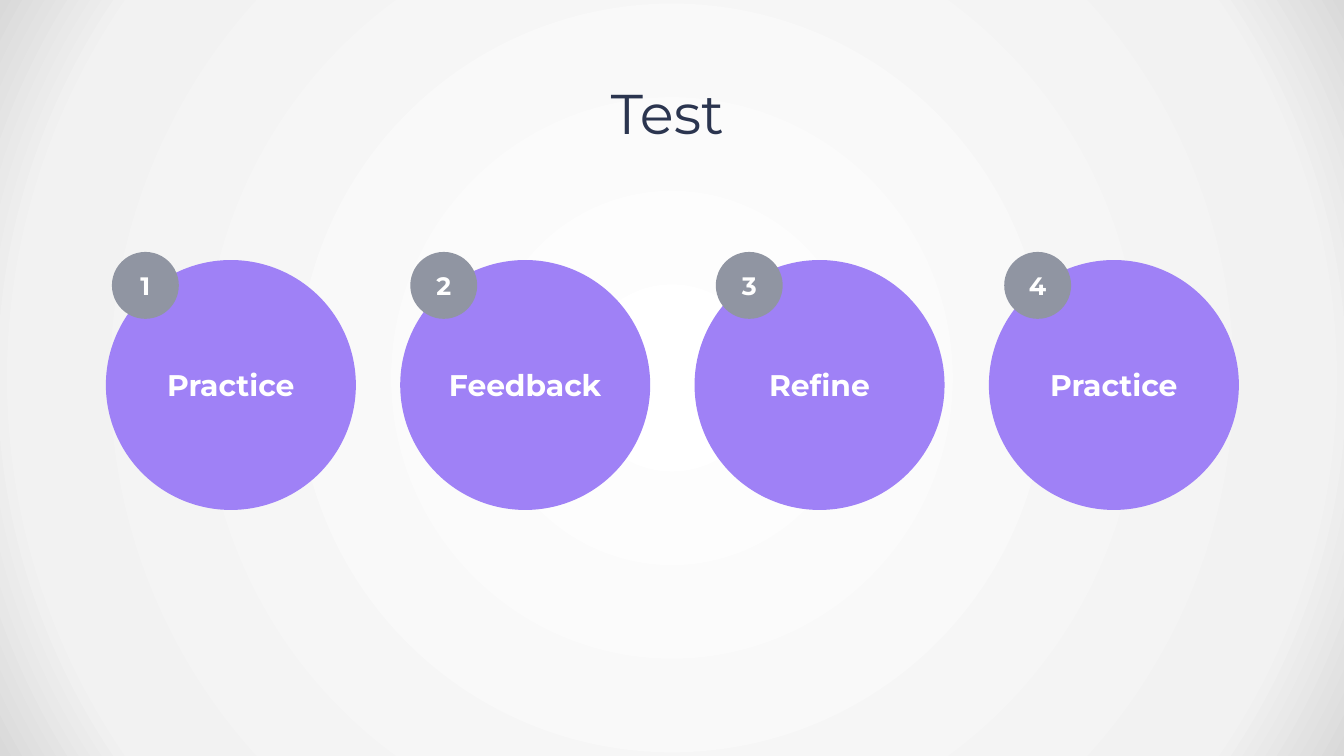
import pptx
import pptx.dml.color
import pptx.enum.shapes
import pptx.enum.text
import pptx.oxml
import pptx.oxml.ns
import pptx.util

RGBColor = pptx.dml.color.RGBColor
WHITE = RGBColor(0xFF, 0xFF, 0xFF)
PALE = RGBColor(0xF2, 0xF2, 0xF2)
SHADE = RGBColor(0xD9, 0xD9, 0xD9)
NAVY = RGBColor(0x2B, 0x35, 0x4F)
PURPLE = RGBColor(0x9F, 0x81, 0xF6)
GREY = RGBColor(0x90, 0x95, 0xA2)

SHAPES = pptx.enum.shapes.MSO_SHAPE


class Page:
    """One slide and its style; lengths are percentages of the slide's size."""

    font_name = "Montserrat"

    def __init__(self, deck):
        self.width, self.height = deck.slide_width, deck.slide_height
        self.shapes = deck.slides.add_slide(deck.slide_layouts[6]).shapes

    def across(self, share):
        return round(self.width * share / 100)

    def down(self, share):
        return round(self.height * share / 100)

    def label(self, box, text, size, color, bold=False, wrap=True, insets=(0, 0, 0, 0)):
        frame = box.text_frame
        frame.word_wrap = wrap
        frame.vertical_anchor = pptx.enum.text.MSO_ANCHOR.MIDDLE
        (frame.margin_left, frame.margin_top,
         frame.margin_right, frame.margin_bottom) = map(pptx.util.Inches, insets)
        para = frame.paragraphs[0]
        para.alignment = pptx.enum.text.PP_ALIGN.CENTER
        span = para.add_run()
        span.text = text
        span.font.name = self.font_name
        span.font.size = pptx.util.Pt(size)
        span.font.bold = bold
        span.font.color.rgb = color
        return para

    def backdrop(self, stops):
        box = self.shapes.add_shape(SHAPES.RECTANGLE, 0, 0, self.width, self.height)
        box.shadow.inherit = False
        box.line.fill.background()
        box.fill.background()
        colors = "".join(
            f'<a:gs pos="{share * 1000}"><a:srgbClr val="{color}"/></a:gs>'
            for share, color in stops)
        gradient = pptx.oxml.parse_xml(
            f'<a:gradFill {pptx.oxml.ns.nsdecls("a")}><a:gsLst>{colors}</a:gsLst>'
            '<a:path path="circle">'
            '<a:fillToRect l="50000" t="50000" r="50000" b="50000"/>'
            '</a:path></a:gradFill>')
        properties = box.element.spPr
        properties.replace(properties.find(pptx.oxml.ns.qn("a:noFill")), gradient)

    def title(self, text, top, height):
        box = self.shapes.add_textbox(0, self.down(top), self.width, self.down(height))
        para = self.label(box, text, 40, NAVY, insets=(0, 0.04, 0.09, 0.04))
        para.line_spacing = 0.9

    def circle(self, text, left, top, diameter, fill, size, wrap=True):
        side = self.across(diameter)
        box = self.shapes.add_shape(
            SHAPES.OVAL, self.across(left), self.down(top), side, side)
        box.shadow.inherit = False
        box.fill.solid()
        box.fill.fore_color.rgb = fill
        box.line.fill.background()
        self.label(box, text, size, WHITE, bold=True, wrap=wrap)


def main():
    deck = pptx.Presentation()
    deck.slide_width = pptx.util.Inches(13.33)
    deck.slide_height = pptx.util.Inches(7.5)
    page = Page(deck)

    # Background and heading
    page.backdrop([(0, WHITE), (85, PALE), (100, SHADE)])
    page.title("Test", top=9.87, height=11.07)

    # Step circles, evenly spaced
    for column, step in enumerate(["Practice", "Feedback", "Refine", "Practice"]):
        page.circle(step, 7.88 + 21.9 * column, 34.4, 18.6, PURPLE, 21.3, wrap=False)

    # Number badges, on top of the circles
    for number, left in enumerate([8.33, 30.53, 53.26, 74.72], start=1):
        page.circle(str(number), left, 33.33, 4.98, GREY, 18)

    deck.save("out.pptx")


if __name__ == "__main__":
    main()
